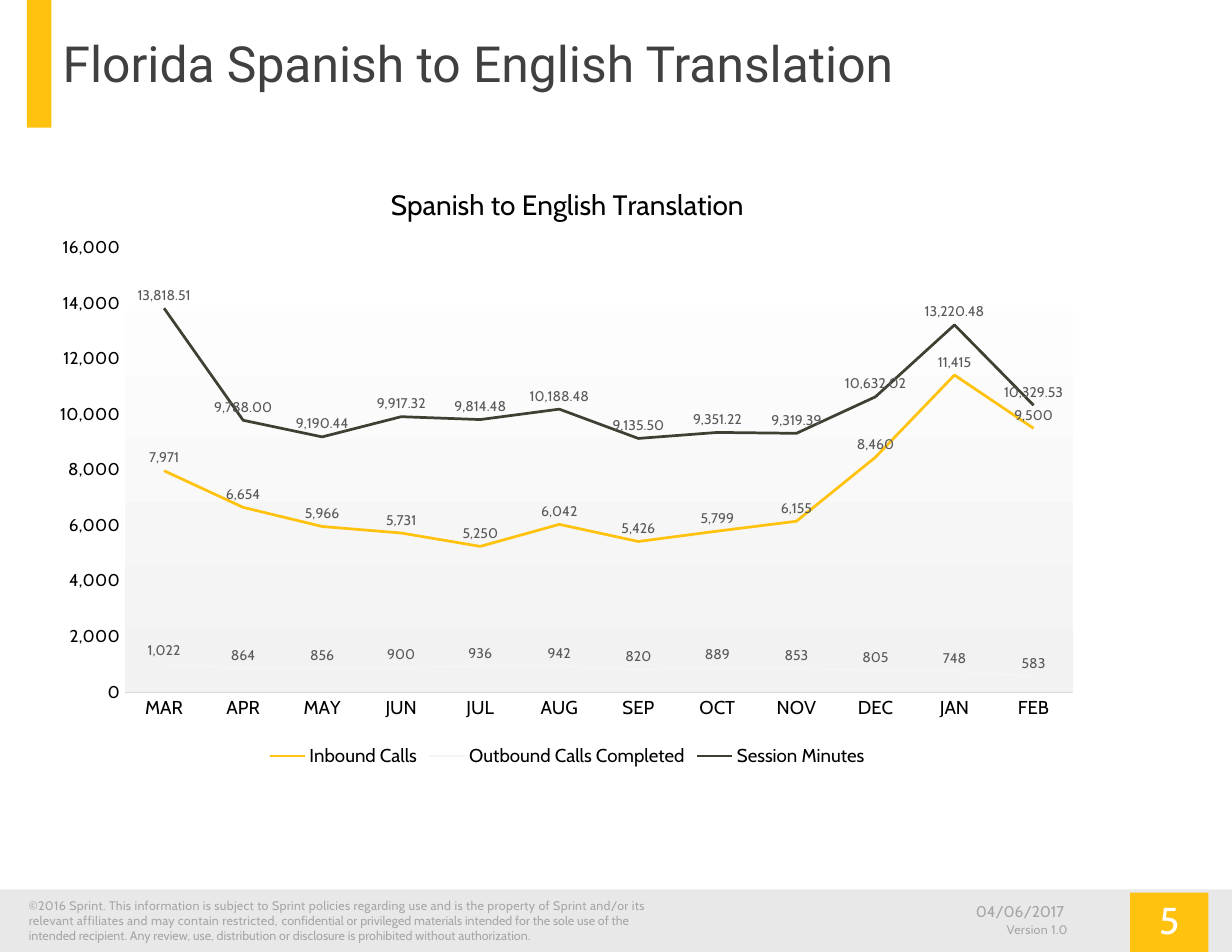
import pptx
import pptx.chart.data
import pptx.dml.color
import pptx.enum.chart
import pptx.enum.shapes
import pptx.enum.text
import pptx.oxml
import pptx.oxml.ns
import pptx.util

W, H = pptx.util.Inches(11), pptx.util.Inches(8.5)
YELLOW, GREY, BLACK = "FFC20E", "A6A6A6", "000000"
ALIGN = pptx.enum.text.PP_ALIGN
ANCHOR = pptx.enum.text.MSO_ANCHOR

MONTHS = "MAR APR MAY JUN JUL AUG SEP OCT NOV DEC JAN FEB".split()
SERIES = [
    ("Inbound Calls", YELLOW, "#,##0",
     [7971, 6654, 5966, 5731, 5250, 6042, 5426, 5799, 6155, 8460, 11415, 9500]),
    ("Outbound Calls Completed", "F3F4F4", "#,##0",
     [1022, 864, 856, 900, 936, 942, 820, 889, 853, 805, 748, 583]),
    ("Session Minutes", "403F34", "#,##0.00",
     [13818.51, 9788, 9190.44, 9917.32, 9814.48, 10188.48,
      9135.5, 9351.22, 9319.39, 10632.02, 13220.48, 10329.53]),
]
LEGAL = [
    ("©2016 Sprint. This information is subject to Sprint policies regarding use and is "
     "the property of Sprint and/or its relevant affiliates and may contain restricted, ", 20),
    ("confidential or privileged materials intended for the sole use of the intended "
     "recipient. Any review, use, distribution or disclosure is prohibited without "
     "authorization.", 0),
]


def rgb(value):
    return pptx.dml.color.RGBColor.from_string(value)


def part(box, x, y, w, h):
    left, top, width, height = box
    return (int(left + width * x / 100), int(top + height * y / 100),
            int(width * w / 100), int(height * h / 100))


def style(font, size, color, name="Cabin"):
    font.size = pptx.util.Pt(size)
    font.name = name
    font.bold = False
    font.color.rgb = rgb(color)


def add_rect(s, box, color):
    sp = s.shapes.add_shape(pptx.enum.shapes.MSO_SHAPE.RECTANGLE, *box)
    sp.shadow.inherit = False
    sp.fill.solid()
    sp.fill.fore_color.rgb = rgb(color)
    sp.line.fill.background()


def add_text(s, box, runs, size, color, name="Cabin", align=ALIGN.LEFT,
             anchor=ANCHOR.TOP, inset=(0.1, 0.05)):
    tf = s.shapes.add_textbox(*box).text_frame
    tf.word_wrap = True
    tf.vertical_anchor = anchor
    tf.margin_left = tf.margin_right = pptx.util.Inches(inset[0])
    tf.margin_top = tf.margin_bottom = pptx.util.Inches(inset[1])
    p = tf.paragraphs[0]
    p.alignment = align
    for text, spacing in runs:
        r = p.add_run()
        r.text = text
        style(r.font, size, color, name)
        if spacing:
            r.font._element.set("spc", str(spacing))


def add_header(s, box):
    add_rect(s, part(box, 2.18, 0, 2, 100), YELLOW)
    add_text(s, part(box, 5.09, 8.77, 84.91, 80.7),
             [("Florida Spanish to English Translation", 0)], 32, "404040", "Roboto",
             anchor=ANCHOR.MIDDLE, inset=(0, 0))


def add_footer(s, box):
    add_rect(s, box, "E8E8E8")
    badge = part(box, 91.73, 5.36, 6.36, 94.64)
    add_rect(s, badge, YELLOW)
    add_text(s, part(box, 1.45, 5.36, 52.27, 94.64), LEGAL, 8, GREY)
    add_text(s, badge, [("5", 0)], 24, "FFFFFF", align=ALIGN.CENTER, inset=(0.08, 0.04))
    add_text(s, part(box, 71.36, 10.71, 15.91, 48), [("04/06/2017", 0)], 10, GREY,
             align=ALIGN.RIGHT)
    add_text(s, part(box, 80.82, 42.86, 12.36, 43), [("Version 1.0", 20)], 8, GREY)


def format_plot_area(chart, x, y, w, h):
    ns = pptx.oxml.ns.nsdecls("c", "a")
    plot_area = chart._chartSpace.chart.plotArea
    for old in plot_area.findall(pptx.oxml.ns.qn("c:layout")):
        plot_area.remove(old)
    plot_area.insert(0, pptx.oxml.parse_xml(
        f'<c:layout {ns}><c:manualLayout><c:layoutTarget val="inner"/>'
        f'<c:xMode val="edge"/><c:yMode val="edge"/><c:x val="{x}"/><c:y val="{y}"/>'
        f'<c:w val="{w}"/><c:h val="{h}"/></c:manualLayout></c:layout>'))
    plot_area.append(pptx.oxml.parse_xml(
        f'<c:spPr {ns}><a:gradFill><a:gsLst>'
        '<a:gs pos="0"><a:srgbClr val="FFFFFF"/></a:gs>'
        '<a:gs pos="100000"><a:srgbClr val="F2F2F2"/></a:gs>'
        '</a:gsLst><a:lin ang="5400000" scaled="0"/></a:gradFill></c:spPr>'))


def format_axes(chart):
    for axis, size in ((chart.category_axis, 12), (chart.value_axis, 11)):
        axis.major_tick_mark = pptx.enum.chart.XL_TICK_MARK.NONE
        axis.minor_tick_mark = pptx.enum.chart.XL_TICK_MARK.NONE
        axis.has_major_gridlines = False
        style(axis.tick_labels.font, size, BLACK)
    chart.category_axis.format.line.color.rgb = rgb("D9D9D9")
    chart.category_axis.format.line.width = pptx.util.Pt(0.75)
    axis = chart.value_axis
    axis.format.line.fill.background()
    axis.minimum_scale, axis.maximum_scale, axis.major_unit = 0, 16000, 2000
    axis.tick_labels.number_format = "#,##0"
    axis.tick_labels.number_format_is_linked = False


def add_calls_chart(s, box):
    data = pptx.chart.data.CategoryChartData()
    data.categories = MONTHS
    for name, _, number_format, values in SERIES:
        data.add_series(name, values, number_format)
    chart = s.shapes.add_chart(pptx.enum.chart.XL_CHART_TYPE.LINE, *box, data).chart
    style(chart.font, 10, BLACK)
    chart.has_title = True
    r = chart.chart_title.text_frame.paragraphs[0].add_run()
    r.text = "Spanish to English Translation"
    style(r.font, 18, BLACK)
    chart.has_legend = True
    chart.legend.position = pptx.enum.chart.XL_LEGEND_POSITION.BOTTOM
    chart.legend.include_in_layout = False
    style(chart.legend.font, 12, BLACK)
    chart.plots[0].vary_by_categories = False
    for series, (_, color, number_format, _) in zip(chart.plots[0].series, SERIES):
        series.smooth = False
        series.marker.style = pptx.enum.chart.XL_MARKER_STYLE.NONE
        series.format.line.color.rgb = rgb(color)
        series.format.line.width = pptx.util.Pt(1.75)
        labels = series.data_labels
        labels.show_value = True
        labels.position = pptx.enum.chart.XL_LABEL_POSITION.ABOVE
        labels.number_format = number_format
        labels.number_format_is_linked = False
        style(labels.font, 9, "595959")
    format_axes(chart)
    format_plot_area(chart, 0.08, 0.14, 0.9, 0.73)


def main():
    prs = pptx.Presentation()
    prs.slide_width, prs.slide_height = W, H
    s = prs.slides.add_slide(prs.slide_layouts[6])
    page = (0, 0, W, H)
    add_footer(s, part(page, 0, 93.41, 100, 6.59))
    add_header(s, part(page, 0, 0, 100, 13.41))
    add_calls_chart(s, part(page, 3.27, 17.06, 85.55, 64))
    prs.save("out.pptx")


if __name__ == "__main__":
    main()
